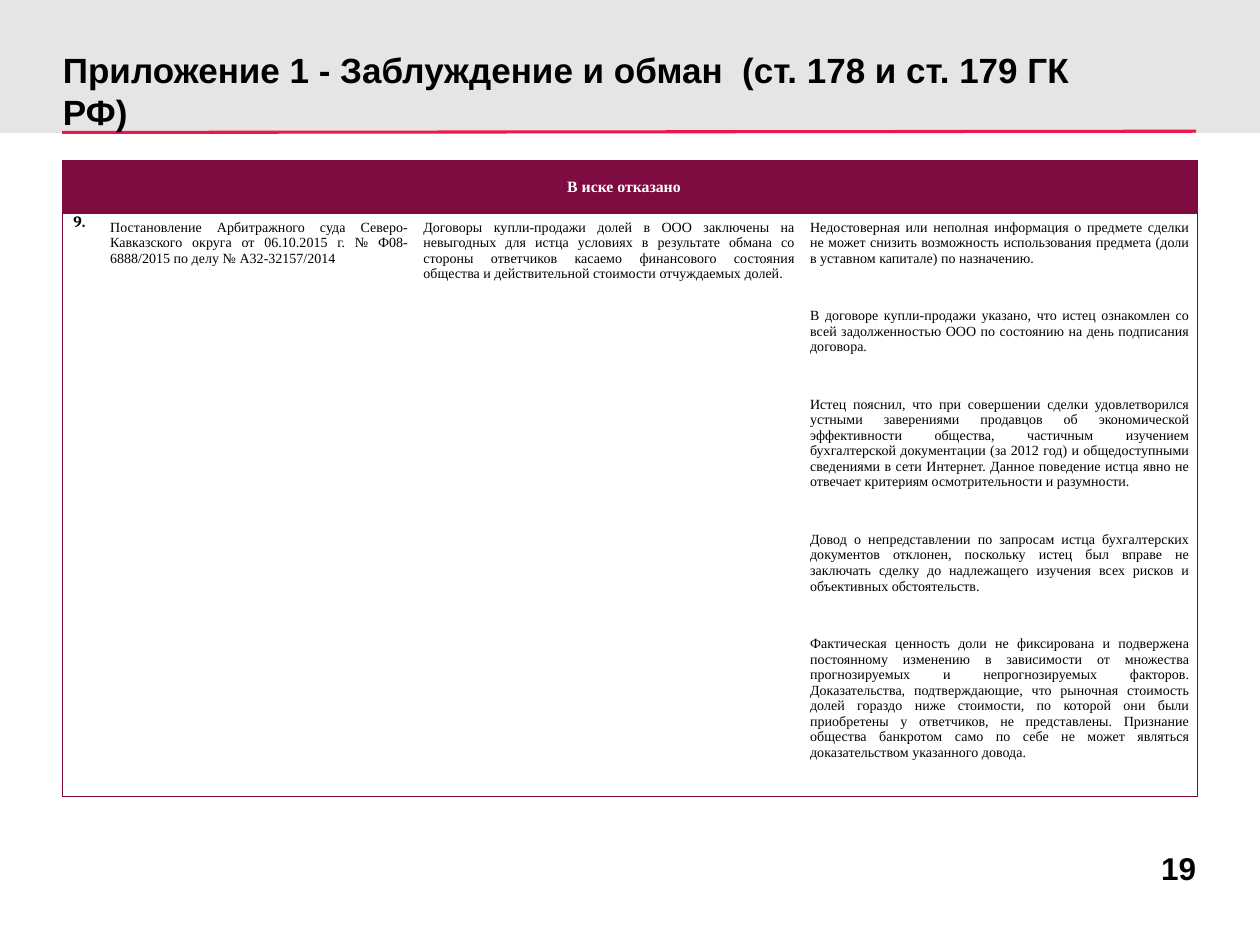
from lxml import etree
from pptx import Presentation
from pptx.dml.color import RGBColor
from pptx.enum import shapes, text
from pptx.oxml import ns
from pptx.util import Pt

TITLE = "Приложение 1 - Заблуждение и обман  (ст. 178 и ст. 179 ГК РФ)"
PAGE = "19"
HEAD = "В иске отказано   "
ROW = [
    [" 9."],
    ["Постановление Арбитражного суда Северо-Кавказского округа от 06.10.2015 г. № Ф08-6888/2015 по делу № А32-32157/2014"],
    ["Договоры купли-продажи долей в ООО заключены на невыгодных для истца условиях в результате обмана со стороны ответчиков касаемо финансового состояния общества и действительной стоимости отчуждаемых долей."],
    [
        "Недостоверная или неполная информация о предмете сделки не может снизить возможность использования предмета (доли в уставном капитале) по назначению.",
        "В договоре купли-продажи указано, что истец ознакомлен со всей задолженностью ООО по состоянию на день подписания договора.",
        "Истец пояснил, что при совершении сделки удовлетворился устными заверениями продавцов об экономической эффективности общества, частичным изучением бухгалтерской документации (за 2012 год) и общедоступными сведениями в сети Интернет. Данное поведение истца явно не отвечает критериям осмотрительности и разумности.",
        "Довод о непредставлении по запросам истца бухгалтерских документов отклонен, поскольку истец был вправе не заключать сделку до надлежащего изучения всех рисков и объективных обстоятельств.",
        "Фактическая ценность доли не фиксирована и подвержена постоянному изменению в зависимости от множества прогнозируемых и непрогнозируемых факторов. Доказательства, подтверждающие, что рыночная стоимость долей гораздо ниже стоимости, по которой они были приобретены у ответчиков, не представлены. Признание общества банкротом само по себе не может являться доказательством указанного довода.",
    ],
]
WIDTHS = [23, 179, 221, 225.5]
HEIGHTS = [30, 315]
WINE = "7E093E"
ALIGN = text.PP_ALIGN
ANCHOR = text.MSO_ANCHOR


def color(code):
    return RGBColor.from_string(code)


def write(frame, paras, font="Arial", size=20, bold=True, ink="000000", align=ALIGN.LEFT, gap=0):
    frame.word_wrap = True
    for i, line in enumerate(paras):
        para = frame.add_paragraph() if i else frame.paragraphs[0]
        para.alignment = align
        if i:
            para.space_before = Pt(gap)
        run = para.add_run()
        run.text = line
        run.font.name, run.font.size, run.font.bold = font, Pt(size), bold
        run.font.color.rgb = color(ink)


def label(slide, box, line, **style):
    frame = slide.shapes.add_textbox(*map(Pt, box)).text_frame
    frame.margin_left = frame.margin_top = frame.margin_right = frame.margin_bottom = 0
    frame.vertical_anchor = ANCHOR.BOTTOM
    write(frame, [line], **style)


def border(cell, sides):
    props = cell._tc.get_or_add_tcPr()
    for i, side in enumerate("LRTB"):
        edge = etree.Element(ns.qn(f"a:ln{side}"), w=str(Pt(0.75)))
        if side in sides:
            fill = etree.SubElement(edge, ns.qn("a:solidFill"))
            etree.SubElement(fill, ns.qn("a:srgbClr"), val=WINE)
        else:
            etree.SubElement(edge, ns.qn("a:noFill"))
        props.insert(i, edge)


def inset(cell, side, top):
    cell.margin_left = cell.margin_right = Pt(side)
    cell.margin_top = cell.margin_bottom = Pt(top)


def banner(slide):
    band = slide.shapes.add_shape(shapes.MSO_SHAPE.RECTANGLE, 0, 0, Pt(720), Pt(76))
    band.shadow.inherit = False
    band.fill.solid()
    band.fill.fore_color.rgb = color("E5E5E6")
    band.line.fill.background()
    rule = slide.shapes.add_connector(
        shapes.MSO_CONNECTOR.STRAIGHT, Pt(35.5), Pt(75.7), Pt(683.5), Pt(75))
    rule.line.color.rgb = color("ED174F")
    rule.line.width = Pt(1.75)
    etree.SubElement(rule._element.spPr, ns.qn("a:effectLst"))


def grid(slide):
    table = slide.shapes.add_table(
        2, len(WIDTHS), Pt(35.7), Pt(91.8), Pt(sum(WIDTHS)), Pt(sum(HEIGHTS))).table
    table.first_row = table.horz_banding = False
    for col, width in zip(table.columns, WIDTHS):
        col.width = Pt(width)
    for row, height in zip(table.rows, HEIGHTS):
        row.height = Pt(height)
    last = len(WIDTHS) - 1
    head = table.cell(0, 0)
    head.merge(table.cell(0, last))
    for cell in table.rows[0].cells:
        cell.fill.solid()
        cell.fill.fore_color.rgb = color("7E0C40")
        border(cell, "LRTB")
    inset(head, 4.3, 0)
    head.vertical_anchor = ANCHOR.MIDDLE
    write(head.text_frame, [HEAD], font="Times New Roman", size=9, ink="FFFFFF", align=ALIGN.CENTER)
    for i, paras in enumerate(ROW):
        cell = table.cell(1, i)
        cell.fill.background()
        border(cell, "TB" + "L" * (i == 0) + "R" * (i == last))
        inset(cell, 4.3, 3.6 if i else 0)
        look = {"font": "Times New Roman", "size": 8, "bold": False} if i else {"font": "Cambria", "size": 9}
        write(cell.text_frame, paras, align=ALIGN.JUSTIFY, gap=24, **look)


def main():
    deck = Presentation()
    deck.slide_width, deck.slide_height = Pt(720), Pt(540)
    slide = deck.slides.add_slide(deck.slide_layouts[6])
    banner(slide)
    label(slide, (36, 10, 612, 66), TITLE)
    grid(slide)
    label(slide, (540, 471, 143.5, 36), PAGE, size=18, align=ALIGN.RIGHT)
    deck.save("out.pptx")


if __name__ == "__main__":
    main()
